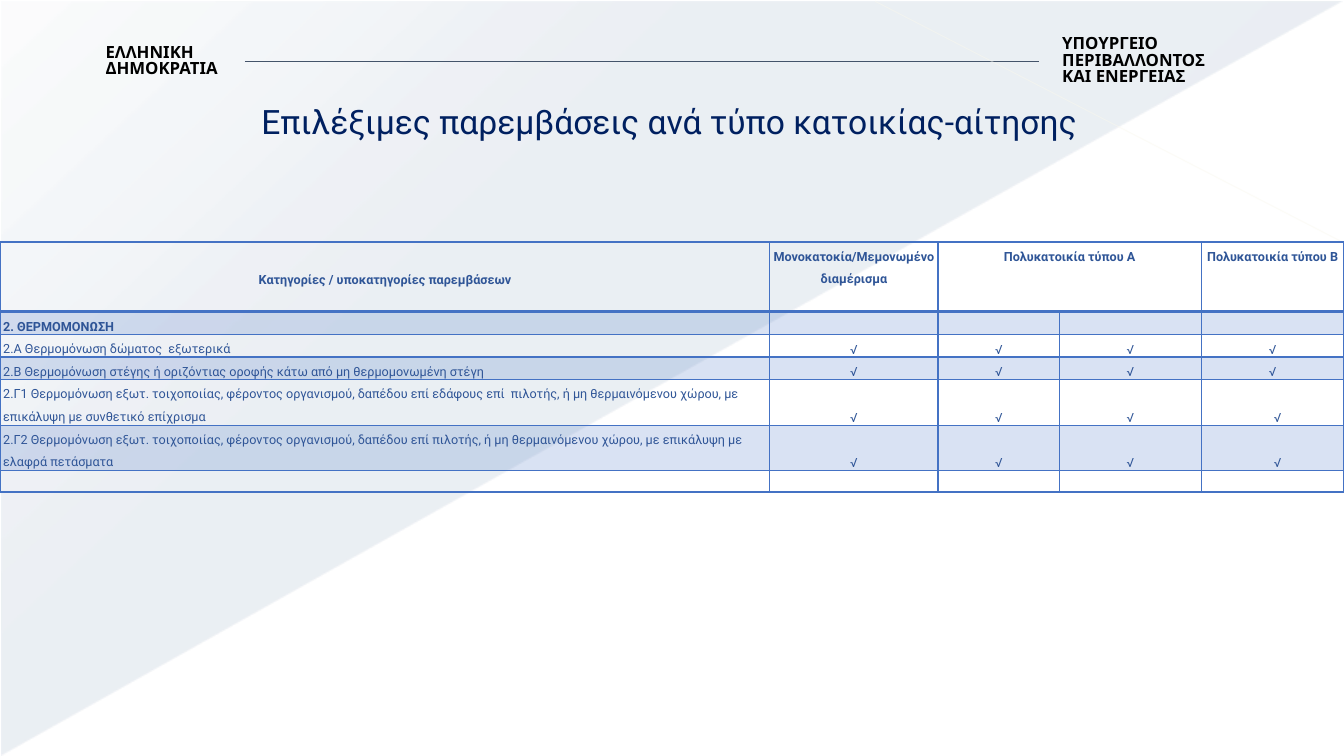
from lxml import etree
from pptx import Presentation
from pptx.dml.color import RGBColor
from pptx.enum.shapes import MSO_CONNECTOR, MSO_SHAPE
from pptx.enum.text import MSO_ANCHOR, PP_ALIGN
from pptx.oxml import parse_xml
from pptx.oxml.ns import qn
from pptx.util import Cm, Pt

LEFT, CENTER = PP_ALIGN.LEFT, PP_ALIGN.CENTER
TOP, MIDDLE, BOTTOM = MSO_ANCHOR.TOP, MSO_ANCHOR.MIDDLE, MSO_ANCHOR.BOTTOM
STRAIGHT, TRIANGLE = MSO_CONNECTOR.STRAIGHT, MSO_SHAPE.RIGHT_TRIANGLE
NS = 'xmlns:a="http://schemas.openxmlformats.org/drawingml/2006/main"'

TITLE = "Επιλέξιμες παρεμβάσεις ανά τύπο κατοικίας-αίτησης"
LABELS = [
    ("ΥΠΟΥΡΓΕΙΟ ΠΕΡΙΒΑΛΛΟΝΤΟΣ ΚΑΙ ΕΝΕΡΓΕΙΑΣ", (26.52, 0.81, 4.7, 1.5)),
    ("ΕΛΛΗΝΙΚΗ ΔΗΜΟΚΡΑΤΙΑ", (2.41, 1.02, 4.7, 1.07)),
]
HEADER = ["Κατηγορίες / υποκατηγορίες παρεμβάσεων", "Μονοκατοικία/Μεμονωμένο διαμέρισμα".replace("Μονοκατοικία", "Μονοκατοκία"),
          "Πολυκατοικία τύπου Α", "", "Πολυκατοικία τύπου Β"]
SECTION = "2. ΘΕΡΜΟΜΟΝΩΣΗ"
MEASURES = [
    "2.A Θερμομόνωση δώματος  εξωτερικά",
    "2.Β Θερμομόνωση στέγης ή οριζόντιας οροφής κάτω από μη θερμομονωμένη στέγη",
    "2.Γ1 Θερμομόνωση εξωτ. τοιχοποιίας, φέροντος οργανισμού, δαπέδου επί εδάφους επί  πιλοτής, "
    "ή μη θερμαινόμενου χώρου, με επικάλυψη με συνθετικό επίχρισμα",
    "2.Γ2 Θερμομόνωση εξωτ. τοιχοποιίας, φέροντος οργανισμού, δαπέδου επί πιλοτής, "
    "ή μη θερμαινόμενου χώρου, με επικάλυψη με ελαφρά πετάσματα",
]
ROWS = [HEADER, [SECTION] + [""] * 4, *[[m] + ["√"] * 4 for m in MEASURES], [""] * 5]
COL_WIDTHS = [19.4, 4.24, 3.07, 3.56, 3.6]
ROW_HEIGHTS = [1.75, 0.53, 0.53, 0.53, 1.14, 1.14, 0.53]
SHIFTED_CHECKS = [(4, 4), (5, 4)]

THEME = {
    "head": {"name": "League Spartan", "size": Pt(12), "bold": True, "color": "000000"},
    "title": {"name": "Roboto", "size": Pt(24), "bold": False, "color": "002060"},
    "strong": {"name": "Roboto", "size": Pt(9), "bold": True, "color": "2F5597"},
    "cell": {"name": "Roboto", "size": Pt(9), "bold": False, "color": "2F5597"},
    "grid": "4472C4",
    "wash": "1F497D",
    "rule": "44546A",
    "crease": "FAF8EE",
}


def set_attrs(obj, **values):
    for name, value in values.items():
        setattr(obj, name, value)


def write(tf, text, style, align, spacing):
    p = tf.paragraphs[0]
    set_attrs(p, alignment=align, line_spacing=spacing)
    if not text:
        p._p.get_or_add_endParaRPr().set("sz", str(int(style["size"].pt * 100)))
        return
    r = p.add_run()
    r.text = text
    set_attrs(r.font, **{k: v for k, v in style.items() if k != "color"})
    r.font.color.rgb = RGBColor.from_string(style["color"])


def set_alpha(element, percent):
    for clr in element.iter(qn("a:srgbClr")):
        etree.SubElement(clr, qn("a:alpha")).set("val", str(percent * 1000))


def add_rule(slide, ends, color, width, alpha=100):
    line = slide.shapes.add_connector(STRAIGHT, *map(Cm, ends))
    line.line.width = Pt(width)
    line.line.color.rgb = RGBColor.from_string(color)
    set_alpha(line._element.spPr, alpha)
    etree.SubElement(line._element.spPr, qn("a:effectLst"))


def add_backdrop(slide):
    sp = slide.shapes.add_shape(TRIANGLE, Cm(0.03), Cm(0.03), Cm(33.81), Cm(19))
    sp.shadow.inherit = False
    sp.line.fill.background()
    sp.rotation = 180
    sp._element.spPr.find(qn("a:xfrm")).set("flipH", "1")
    stops = "".join(
        f'<a:gs pos="{pos}000"><a:srgbClr val="{THEME["wash"]}"><a:alpha val="{alpha}000"/></a:srgbClr></a:gs>'
        for pos, alpha in [(0, 10), (70, 8), (100, 1)])
    gradient = parse_xml(f'<a:gradFill {NS} rotWithShape="1"><a:gsLst>{stops}</a:gsLst>'
                         f'<a:lin ang="{133 * 60000}" scaled="0"/></a:gradFill>')
    sp._element.spPr.find(qn("a:prstGeom")).addnext(gradient)
    slide.shapes._spTree.insert(2, sp._element)


def add_borders(cell, widths):
    tc_pr = cell._tc.get_or_add_tcPr()
    for side, width in widths.items():
        tc_pr.append(parse_xml(
            f'<a:ln{side} {NS} w="{Pt(width)}"><a:solidFill><a:srgbClr val="{THEME["grid"]}"/>'
            f'</a:solidFill></a:ln{side}>'))


def add_measures(slide):
    frame = slide.shapes.add_table(len(ROWS), len(COL_WIDTHS), 0, Cm(6.1),
                                   Cm(sum(COL_WIDTHS)), Cm(sum(ROW_HEIGHTS)))
    table = frame.table
    set_attrs(table, first_row=False, horz_banding=False)
    for column, width in zip(table.columns, COL_WIDTHS):
        column.width = Cm(width)
    for row, height in zip(table.rows, ROW_HEIGHTS):
        row.height = Cm(height)
    for i, texts in enumerate(ROWS):
        for j, text in enumerate(texts):
            cell = table.cell(i, j)
            indent = 0.25 if (i, j) in SHIFTED_CHECKS else 0
            if i == 0:
                anchor = TOP if j else MIDDLE
            else:
                anchor = BOTTOM if j or i == 1 else TOP
            set_attrs(cell, margin_left=Cm(0.08 + indent), margin_right=Cm(0.08),
                      margin_top=0, margin_bottom=0, vertical_anchor=anchor)
            write(cell.text_frame, text, THEME["strong" if i < 2 else "cell"],
                  CENTER if i == 0 or j else LEFT, 1.5)
            add_borders(cell, {"L": 1, "R": 1, "T": 2 if i == 1 else 1, "B": 2 if i == 0 else 1})
            if i in (1, 3, 5):
                cell.fill.solid()
                cell.fill.fore_color.rgb = RGBColor.from_string(THEME["grid"])
                set_alpha(cell._tc.tcPr.find(qn("a:solidFill")), 20)
            else:
                cell.fill.background()
    table.cell(0, 2).merge(table.cell(0, 3))


def main():
    """Build the slide of eligible measures per type of dwelling."""
    prs = Presentation()
    set_attrs(prs, slide_width=Cm(33.87), slide_height=Cm(19.05))
    slide = prs.slides.add_slide(prs.slide_layouts[5])
    add_backdrop(slide)
    add_rule(slide, (6.17, 1.55, 26.19, 1.55), THEME["rule"], 1)
    add_rule(slide, (33.83, 6.1, 22.05, 0.03), THEME["crease"], 0.75, 45)
    for text, box in LABELS:
        tf = slide.shapes.add_textbox(*map(Cm, box)).text_frame
        tf.word_wrap = True
        write(tf, text, THEME["head"], LEFT, 0.8)
    title = slide.shapes.title
    set_attrs(title, left=Cm(2.26), top=Cm(2.39), width=Cm(29.21), height=Cm(1.47))
    title.text_frame.vertical_anchor = MIDDLE
    write(title.text_frame, TITLE, THEME["title"], CENTER, 0.9)
    add_measures(slide)
    prs.save("out.pptx")


if __name__ == "__main__":
    main()
